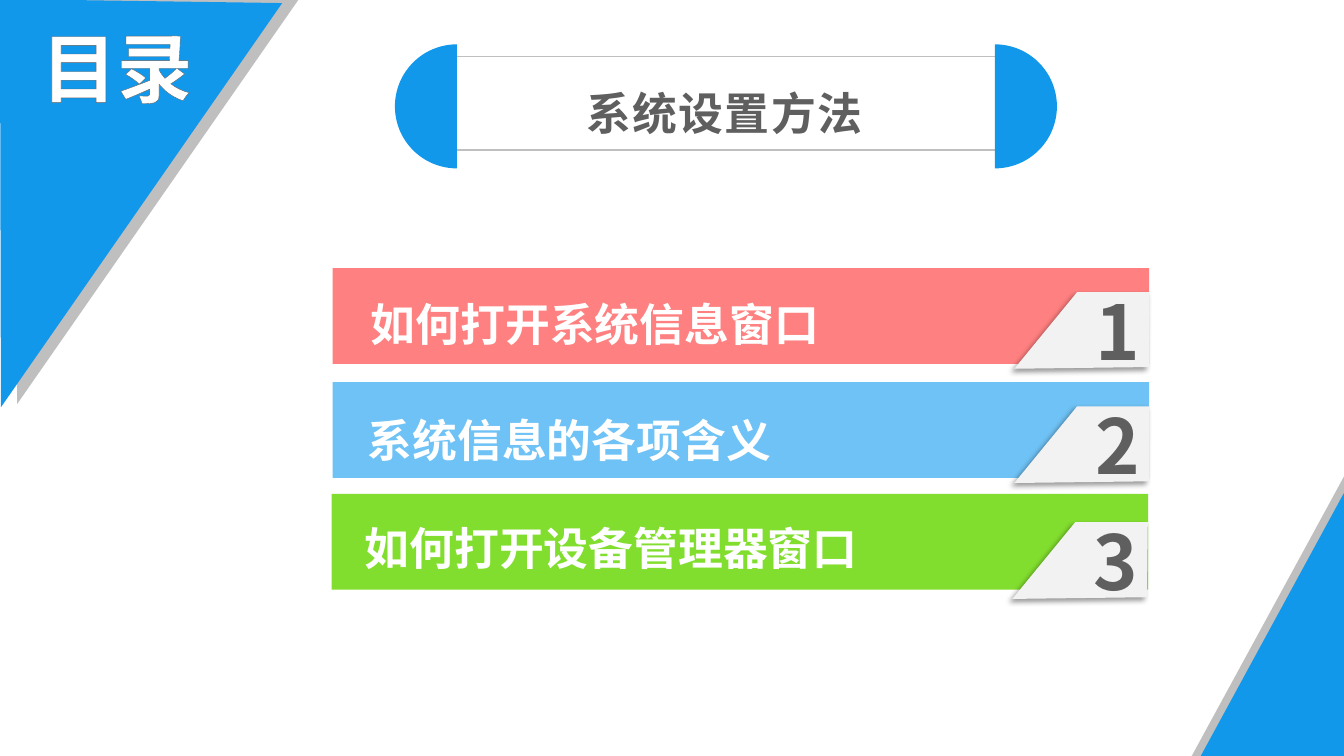
from lxml import etree
from pptx import Presentation
from pptx.dml.color import RGBColor
from pptx.enum.shapes import MSO_SHAPE
from pptx.enum.text import MSO_ANCHOR, MSO_AUTO_SIZE, PP_ALIGN
from pptx.oxml import parse_xml
from pptx.oxml.ns import nsdecls, qn
from pptx.util import Pt

RECT, CHORD = MSO_SHAPE.RECTANGLE, MSO_SHAPE.CHORD
MIDDLE, BOTTOM = MSO_ANCHOR.MIDDLE, MSO_ANCHOR.BOTTOM
LEFT, CENTER, RIGHT = PP_ALIGN.LEFT, PP_ALIGN.CENTER, PP_ALIGN.RIGHT
GROW = MSO_AUTO_SIZE.SHAPE_TO_FIT_TEXT
BLUE, GREY, DARK, WHITE, PALE = "1198EB", "BFBFBF", "5F5F5F", "FFFFFF", "F2F2F2"
SANS, SANS_JP = "Noto Sans CJK SC", "Noto Sans CJK JP"


def paint(sp, fill=None, line=None):
    """Give a shape a flat fill and outline, each a hex colour or None."""
    sp.shadow.inherit = False
    if fill:
        sp.fill.solid()
        sp.fill.fore_color.rgb = RGBColor.from_string(fill)
    else:
        sp.fill.background()
    if line:
        sp.line.color.rgb = RGBColor.from_string(line)
        sp.line.width = Pt(1)
    else:
        sp.line.fill.background()


def write(sp, text, size, font, color, align, **frame):
    """Set the only line of a shape; frame holds text frame attributes."""
    for name, value in frame.items():
        setattr(sp.text_frame, name, value)
    p = sp.text_frame.paragraphs[0]
    p.alignment = align
    r = p.add_run()
    r.text = text
    for name, value in {"size": Pt(size), "bold": True, "name": font}.items():
        setattr(r.font, name, value)
    r.font.color.rgb = RGBColor.from_string(color)
    etree.SubElement(r.font._element, qn("a:ea"), typeface=font)
    return p


prs = Presentation()
prs.slide_width, prs.slide_height = Pt(960), Pt(540)
s = prs.slides.add_slide(prs.slide_layouts[6])

# Corner triangles, each grey one under a blue one
corners = [
    (GREY, [(844.6, 552.2), (967.7, 326.2), (967.7, 554.4)]),
    (BLUE, [(851.8, 550.8), (974.9, 324.7), (974.9, 553)]),
    (GREY, [(213.1, 0), (12.2, 288.7), (12.2, -2.2)]),
    (BLUE, [(201.6, 2.2), (0.7, 290.9), (0, -0.7)]),
]
for color, points in corners:
    start, *rest = [(Pt(x), Pt(y)) for x, y in points]
    fb = s.shapes.build_freeform(*start)
    fb.add_line_segments(rest)
    paint(fb.convert_to_shape(), color)

heading = s.shapes.add_textbox(Pt(22.3), Pt(11.5), Pt(122.4), Pt(72.7))
p = write(heading, "目录", 54, SANS, WHITE, CENTER, word_wrap=False, auto_size=GROW)
p.runs[0].font._element.insert(0, parse_xml(
    f'<a:ln {nsdecls("a")} w="12700"><a:solidFill><a:srgbClr val="{DARK}"/></a:solidFill></a:ln>'))

# Title banner with a half disc at each end
banner = s.shapes.add_shape(RECT, Pt(321.1), Pt(40.3), Pt(398.2), Pt(67))
paint(banner, line=GREY)
title = s.shapes.add_textbox(Pt(326.2), Pt(48.2), Pt(382.3), Pt(55.4))
p = write(title, "系统设置方法", 32, SANS_JP, DARK, CENTER,
          word_wrap=True, vertical_anchor=BOTTOM)
p.line_spacing = 0.9
p.runs[0].font._element.set("spc", "100")
# Chord angles are in units of 5/3 degree
for x, start, end in [(282.1, 54, 162), (666.4, 162, 54)]:
    disc = s.shapes.add_shape(CHORD, Pt(x), Pt(31.7), Pt(88.6), Pt(88.6))
    disc.adjustments[0], disc.adjustments[1] = start, end
    paint(disc, BLUE)

# Contents: text, colour, bar (x, y), tab (x, y), text (x, y)
entries = [
    ("如何打开系统信息窗口", "FF8080", (237.6, 191.5), (724.5, 208.6), (257.8, 196.6)),
    ("系统信息的各项含义", "6FC2F5", (237.6, 272.9), (724.5, 290.2), (255.6, 280.1)),
    ("如何打开设备管理器窗口", "82DE2E", (236.9, 352.8), (723.1, 373), (253.4, 357.1)),
]
for number, (text, color, bar_at, tab_at, text_at) in enumerate(entries, 1):
    bar = s.shapes.add_shape(RECT, *map(Pt, bar_at), Pt(583.2), Pt(68.4))
    paint(bar, color)

    x, y = tab_at
    fb = s.shapes.build_freeform(Pt(x + 96.8), Pt(y))
    fb.add_line_segments([(Pt(x + dx), Pt(y + dy))
                          for dx, dy in [(96.2, 53.6), (0, 54.8), (44.9, 0)]])
    tab = fb.convert_to_shape()
    paint(tab, PALE)
    effects = tab._element.spPr.find(qn("a:effectLst"))
    effects.append(parse_xml(
        f'<a:outerShdw {nsdecls("a")} blurRad="50800" dist="38100" dir="8100000" '
        'algn="tr" rotWithShape="0"><a:srgbClr val="000000"><a:alpha val="40000"/>'
        '</a:srgbClr></a:outerShdw>'))
    write(tab, str(number), 54, SANS, DARK, RIGHT, vertical_anchor=MIDDLE)

    label = s.shapes.add_textbox(*map(Pt, text_at), Pt(427.7), Pt(52.6))
    p = write(label, text, 32, "Arial", WHITE, LEFT, word_wrap=True, auto_size=GROW)
    p.line_spacing = 1.3

prs.save("out.pptx")
